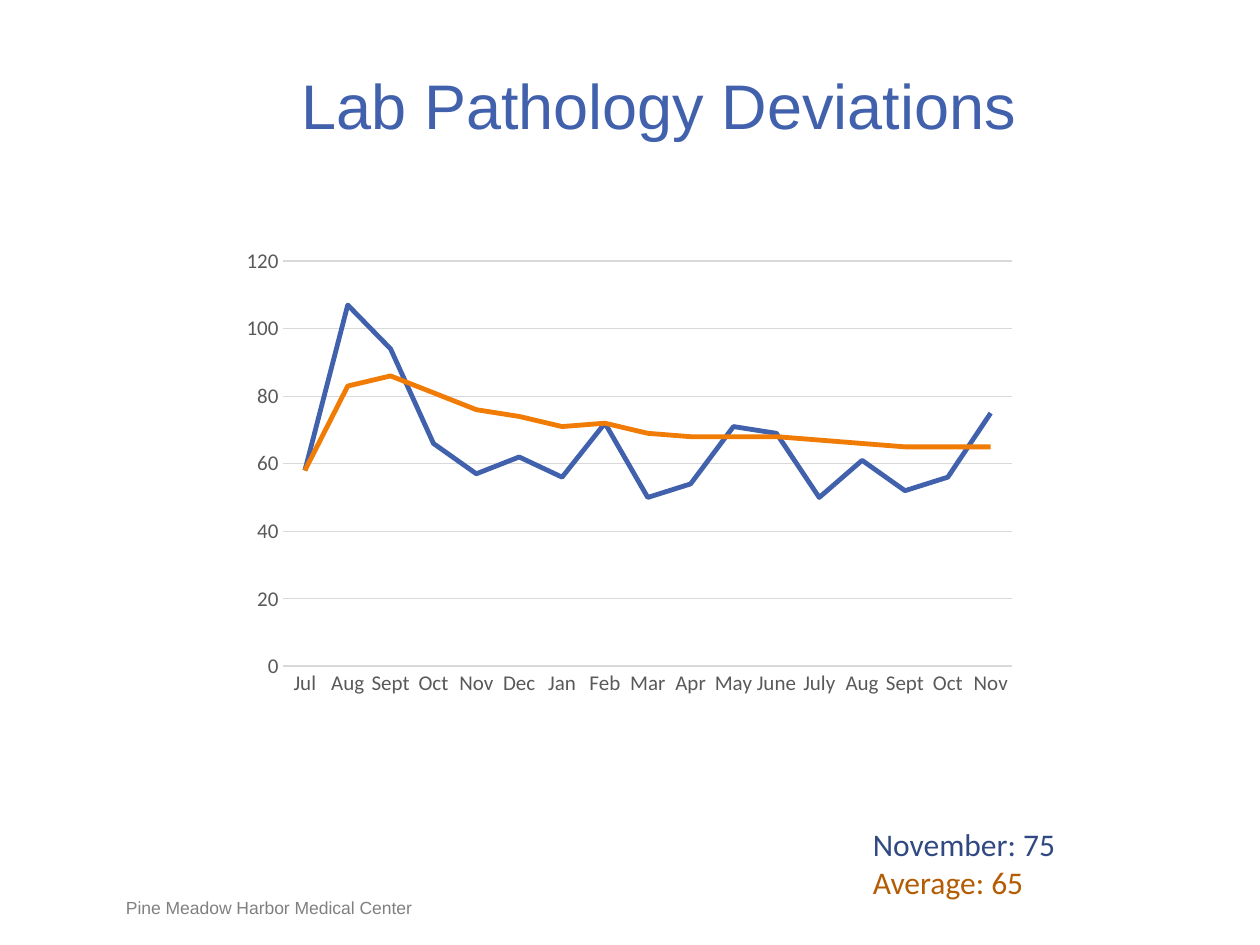
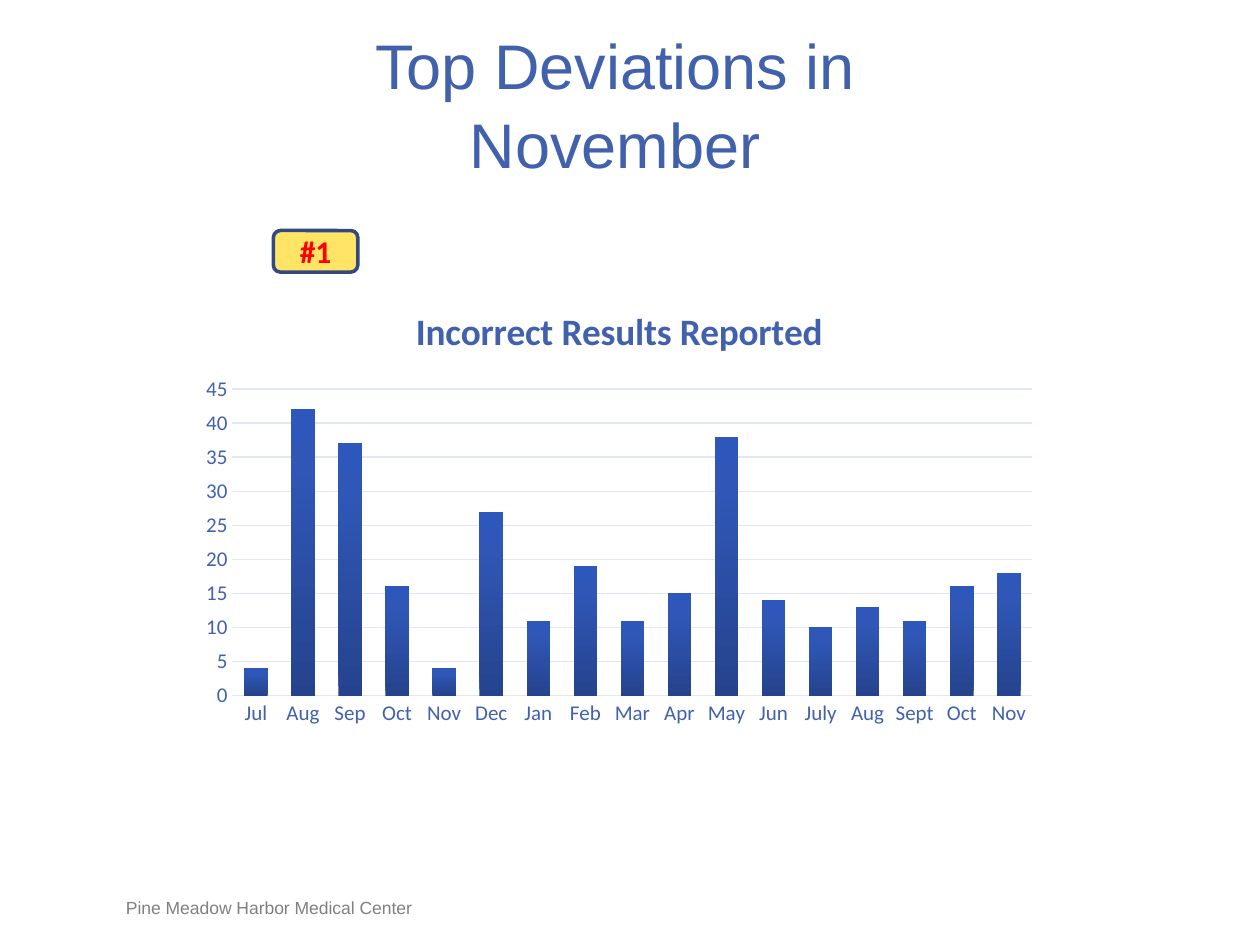
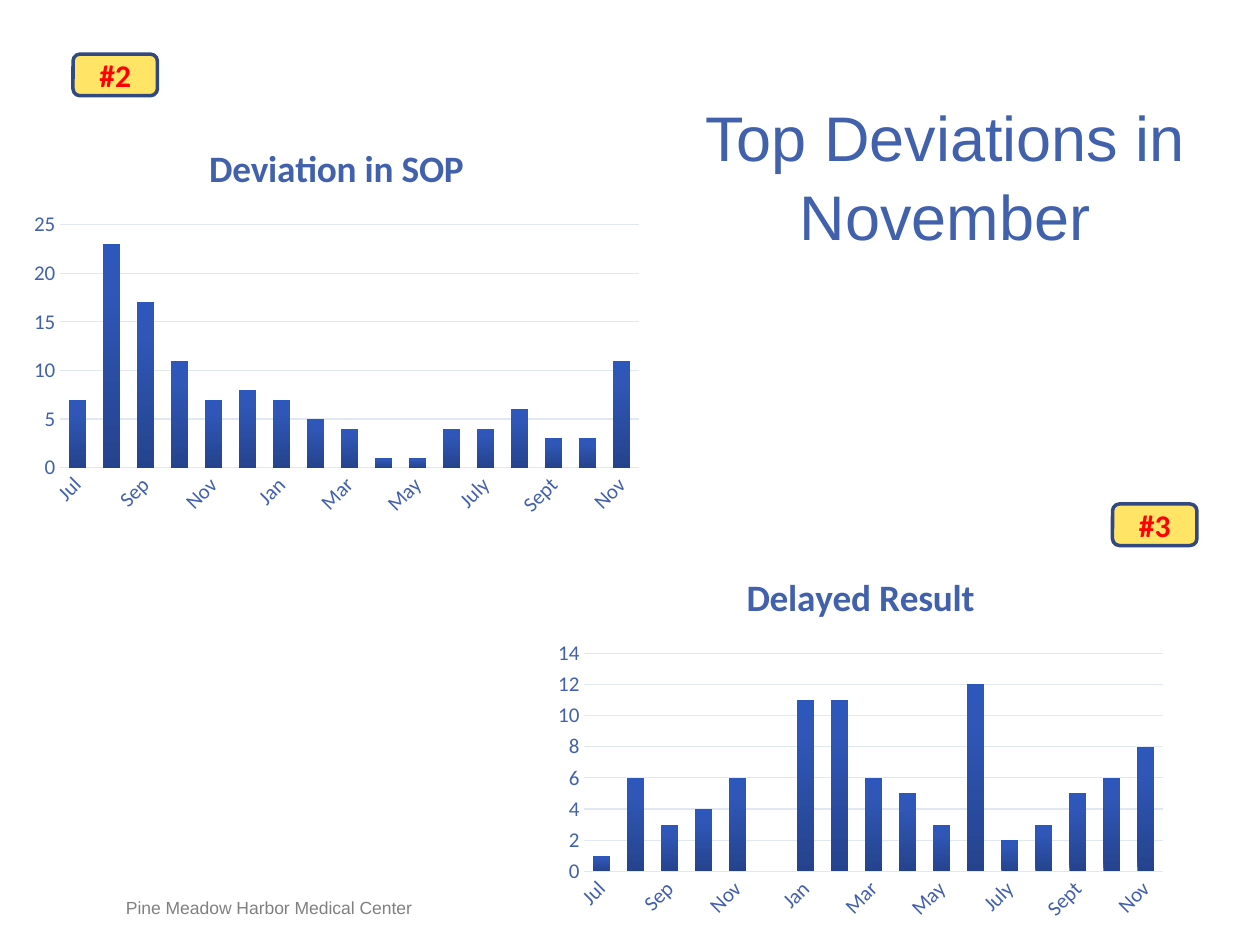
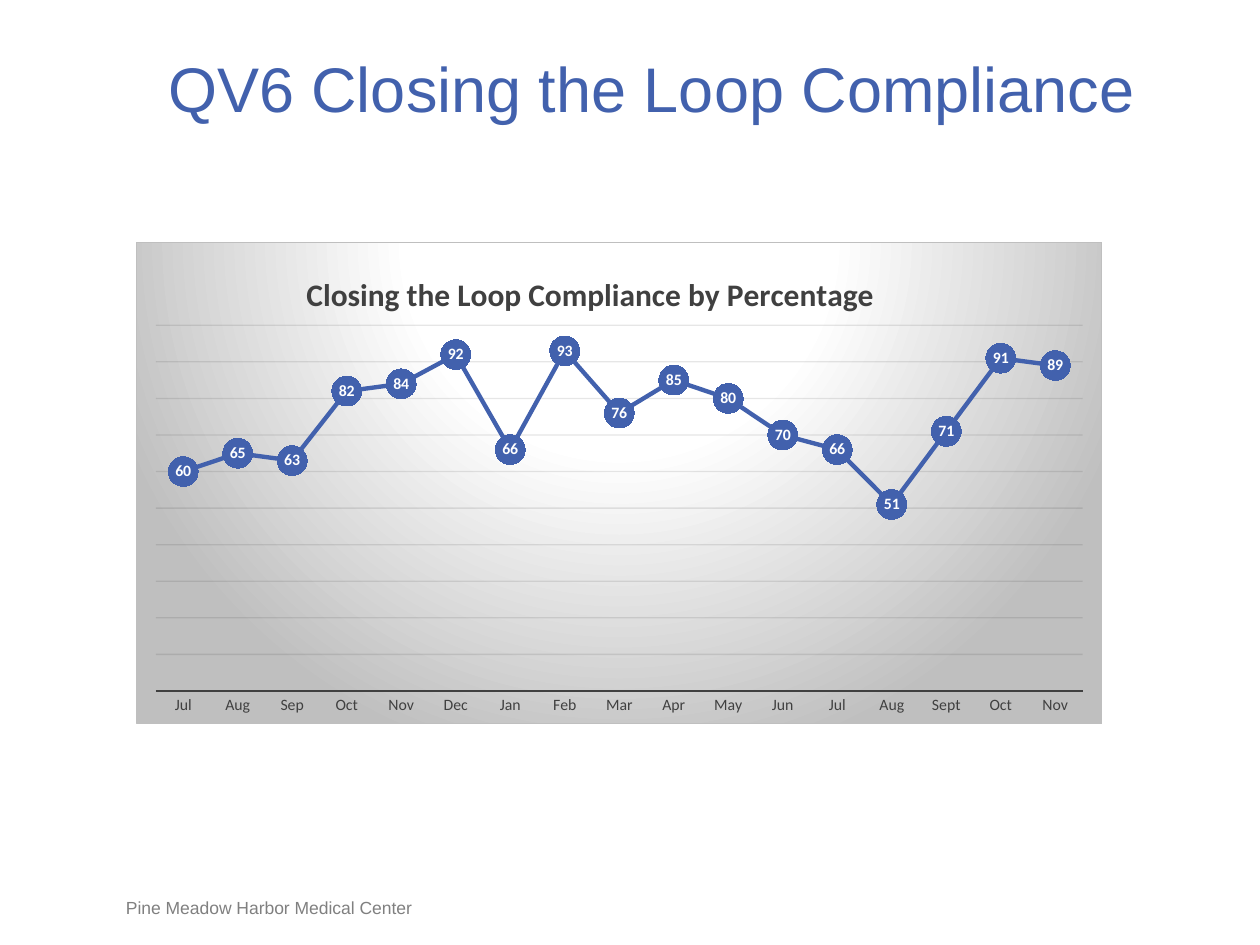
import pptx
import pptx.chart.data
import pptx.dml.color
import pptx.enum.chart
import pptx.enum.shapes
import pptx.enum.text
import pptx.oxml
import pptx.oxml.ns
import pptx.util

Inches = pptx.util.Inches
Pt = pptx.util.Pt
qn = pptx.oxml.ns.qn
ChartType = pptx.enum.chart.XL_CHART_TYPE
Anchor = pptx.enum.text.MSO_ANCHOR
Align = pptx.enum.text.PP_ALIGN

BLUE = "4261AD"
PALE_BLUE = "E2E7F4"
ORANGE = "F07B05"
DARK = "404040"
LIGHT_GRAY = "D9D9D9"
SILVER = "BFBFBF"
FOOTER = "Pine Meadow Harbor Medical Center"
YEAR = ["Jul", "Aug", "Sep", "Oct", "Nov", "Dec", "Jan", "Feb", "Mar", "Apr", "May", "Jun"]
MONTHS = YEAR + ["July", "Aug", "Sept", "Oct", "Nov"]
DEVIATION_MONTHS = ["Sept" if month == "Sep" else "June" if month == "Jun" else month for month in MONTHS]
COMPLIANCE_MONTHS = ["Jul" if month == "July" else month for month in MONTHS]
NAMESPACES = pptx.oxml.ns.nsdecls("a", "c")
BAR_STOPS = [(0, "25438D"), (80, "3057B7"), (100, "2E57BB")]
BACKDROP_STOPS = [(0, "FFFFFF"), (39, "FFFFFF"), (100, SILVER)]
UPWARD = '<a:lin ang="16200000" scaled="0"/>'
RADIAL = '<a:path path="circle"><a:fillToRect l="50000" t="-80000" r="50000" b="180000"/></a:path>'


def color(value):
    return pptx.dml.color.RGBColor.from_string(value)


def box(left, top, width, height):
    return [Inches(length) for length in (left, top, width, height)]


def style_font(font, size, value, name="Calibri", bold=False):
    font.size = Pt(size)
    font.name = name
    font.bold = bold
    font.color.rgb = color(value)


def style_line(line, value, width):
    line.color.rgb = color(value)
    line.width = Pt(width)


def add_run(paragraph, text, size, value, name="Calibri", bold=False):
    run = paragraph.add_run()
    run.text = text
    style_font(run.font, size, value, name, bold)


def clear_margins(frame):
    frame.margin_left = frame.margin_right = frame.margin_top = frame.margin_bottom = 0
    frame.word_wrap = True


def gradient(stops, direction):
    stop_xml = "".join(
        f'<a:gs pos="{position * 1000}"><a:srgbClr val="{value}"/></a:gs>' for position, value in stops
    )
    return f'<a:gradFill {NAMESPACES} rotWithShape="1"><a:gsLst>{stop_xml}</a:gsLst>{direction}</a:gradFill>'


def add_slide(presentation, layout, title, place):
    slide = presentation.slides.add_slide(layout)
    shape = slide.shapes.title
    shape.left, shape.top, shape.width, shape.height = box(*place)
    frame = shape.text_frame
    clear_margins(frame)
    frame.auto_size = pptx.enum.text.MSO_AUTO_SIZE.NONE
    frame.vertical_anchor = Anchor.TOP
    paragraph = frame.paragraphs[0]
    paragraph.alignment = Align.CENTER
    paragraph.line_spacing = 1.05
    add_run(paragraph, title, 36, BLUE, "Arial")
    return slide


def add_shared_footer(layout, slide):
    footer = slide.shapes.add_textbox(*box(1, 7.12, 3.17, 0.17))
    clear_margins(footer.text_frame)
    footer.text_frame.vertical_anchor = Anchor.BOTTOM
    add_run(footer.text_frame.paragraphs[0], FOOTER, 10, "808080", "Arial")
    layout.shapes.element.append(footer.element)


def add_summary(slide, place, lines):
    frame = slide.shapes.add_textbox(*box(*place)).text_frame
    frame.word_wrap = True
    for index, (text, value) in enumerate(lines):
        paragraph = frame.add_paragraph() if index else frame.paragraphs[0]
        add_run(paragraph, text, 18, value)


def add_badge(slide, text, left, top):
    rounded = pptx.enum.shapes.MSO_SHAPE.ROUNDED_RECTANGLE
    shape = slide.shapes.add_shape(rounded, *box(left, top, 0.67, 0.33))
    shape.shadow.inherit = False
    shape.fill.solid()
    shape.fill.fore_color.rgb = color("FFE466")
    style_line(shape.line, "314880", 2)
    shape.text_frame.vertical_anchor = Anchor.MIDDLE
    paragraph = shape.text_frame.paragraphs[0]
    paragraph.alignment = Align.CENTER
    add_run(paragraph, text, 18, "FF0000", bold=True)


def add_chart(slide, kind, place, months, series, maximum, step):
    data = pptx.chart.data.CategoryChartData()
    data.categories = months
    for name, values in series:
        data.add_series(name, values)
    chart = slide.shapes.add_chart(kind, *box(*place), data).chart
    style_font(chart.font, 10, "000000")
    chart.has_legend = False
    chart.has_title = False
    chart.plots[0].vary_by_categories = False
    chart.value_axis.minimum_scale = 0
    chart.value_axis.maximum_scale = maximum
    chart.value_axis.major_unit = step
    return chart


def style_axes(chart, size, text_color, axis_line, grid_line):
    for axis in (chart.category_axis, chart.value_axis):
        axis.major_tick_mark = axis.minor_tick_mark = pptx.enum.chart.XL_TICK_MARK.NONE
        style_font(axis.tick_labels.font, size, text_color)
    style_line(chart.category_axis.format.line, *axis_line)
    chart.value_axis.format.line.fill.background()
    style_line(chart.value_axis.major_gridlines.format.line, *grid_line)
    for axis in chart.element.iter(qn("c:catAx")):
        axis.find(qn("c:txPr")).find(qn("a:bodyPr")).set("rot", "-60000000")


def set_chart_title(chart, text, size, value):
    chart.has_title = True
    chart.chart_title.include_in_layout = False
    add_run(chart.chart_title.text_frame.paragraphs[0], text, size, value, bold=True)


def style_series_line(series, value, width):
    style_line(series.format.line, value, width)
    series.smooth = False


def add_deviation_chart(slide, place, title, values, maximum, step):
    chart = add_chart(slide, ChartType.COLUMN_CLUSTERED, place, MONTHS, [(title, values)], maximum, step)
    style_axes(chart, 12, BLUE, (PALE_BLUE, 0.75), (PALE_BLUE, 0.75))
    set_chart_title(chart, title, 21.3, BLUE)
    chart.plots[0].gap_width = 100
    chart.plots[0].overlap = -24
    for series in chart.element.iter(qn("c:ser")):
        series.get_or_add_spPr().insert(0, pptx.oxml.parse_xml(gradient(BAR_STOPS, UPWARD)))


def add_trend_chart(slide, monthly, average):
    series = [("Series 1", monthly), ("Series 2", average)]
    chart = add_chart(slide, ChartType.LINE, (1.83, 1.9, 6.33, 3.7), DEVIATION_MONTHS, series, 120, 20)
    style_axes(chart, 12, "595959", (LIGHT_GRAY, 1), (LIGHT_GRAY, 0.75))
    for line, value in zip(chart.plots[0].series, (BLUE, ORANGE)):
        style_series_line(line, value, 2.75)
        line.marker.style = pptx.enum.chart.XL_MARKER_STYLE.NONE


def fill_backdrop(chart):
    backdrop = pptx.oxml.parse_xml(
        f'<c:spPr {NAMESPACES}>{gradient(BACKDROP_STOPS, RADIAL)}'
        f'<a:ln w="9525"><a:solidFill><a:srgbClr val="{SILVER}"/></a:solidFill></a:ln></c:spPr>'
    )
    chart.element.find(qn("c:chart")).addnext(backdrop)


def place_chart_title(chart, left, top):
    title = chart.element.find(qn("c:chart")).find(qn("c:title"))
    for layout in title.findall(qn("c:layout")):
        title.remove(layout)
    title.find(qn("c:tx")).addnext(pptx.oxml.parse_xml(
        f'<c:layout {NAMESPACES}><c:manualLayout><c:xMode val="edge"/><c:yMode val="edge"/>'
        f'<c:x val="{left}"/><c:y val="{top}"/></c:manualLayout></c:layout>'
    ))


def fade_gridlines(chart, percent):
    for gridlines in chart.element.iter(qn("c:majorGridlines")):
        for value in gridlines.iter(qn("a:srgbClr")):
            value.append(pptx.oxml.parse_xml(f'<a:alpha {NAMESPACES} val="{percent * 1000}"/>'))


def add_compliance_chart(slide, values):
    place = (1.08, 1.92, 7.67, 3.83)
    chart = add_chart(slide, ChartType.LINE_MARKERS, place, COMPLIANCE_MONTHS, [("Series 1", values)], 100, 10)
    style_axes(chart, 9, DARK, (DARK, 1.5), ("0D0D0D", 0.75))
    fade_gridlines(chart, 10)
    chart.value_axis.visible = False
    set_chart_title(chart, "Closing the Loop Compliance by Percentage", 18, DARK)
    place_chart_title(chart, 0.17, 0.05)
    fill_backdrop(chart)
    series = chart.plots[0].series[0]
    style_series_line(series, BLUE, 2.5)
    marker = series.marker
    marker.style = pptx.enum.chart.XL_MARKER_STYLE.CIRCLE
    marker.size = 17
    marker.format.fill.solid()
    marker.format.fill.fore_color.rgb = color(BLUE)
    marker.format.line.fill.background()
    labels = series.data_labels
    labels.show_value = True
    labels.position = pptx.enum.chart.XL_LABEL_POSITION.CENTER
    labels.number_format = "0"
    labels.number_format_is_linked = False
    style_font(labels.font, 9, "FFFFFF", bold=True)


def main():
    presentation = pptx.Presentation()
    presentation.slide_width = Inches(10)
    presentation.slide_height = Inches(7.5)
    layout = presentation.slide_layouts[5]

    slide = add_slide(presentation, layout, "Lab Pathology Deviations", (0.98, 0.5, 8.5, 0.61))
    add_shared_footer(layout, slide)
    add_summary(slide, (6.83, 6.5, 2, 0.71), [("November: 75", "314982"), ("Average: 65", "B45C04")])
    add_trend_chart(
        slide,
        [58, 107, 94, 66, 57, 62, 56, 72, 50, 54, 71, 69, 50, 61, 52, 56, 75],
        [58, 83, 86, 81, 76, 74, 71, 72, 69, 68, 68, 68, 67, 66, 65, 65, 65],
    )

    slide = add_slide(presentation, layout, "Top Deviations in November", (2.17, 0.18, 5.42, 1.21))
    add_badge(slide, "#1", 2.17, 1.83)
    incorrect = [4, 42, 37, 16, 4, 27, 11, 19, 11, 15, 38, 14, 10, 13, 11, 16, 18]
    add_deviation_chart(slide, (1.5, 2.25, 6.83, 3.58), "Incorrect Results Reported", incorrect, 45, 5)

    slide = add_slide(presentation, layout, "Top Deviations in November", (5.5, 0.75, 4, 1.21))
    add_badge(slide, "#3", 8.83, 4)
    procedure = [7, 23, 17, 11, 7, 8, 7, 5, 4, 1, 1, 4, 4, 6, 3, 3, 11]
    add_deviation_chart(slide, (0.17, 0.96, 5, 3.21), "Deviation in SOP", procedure, 25, 5)
    delayed = [1, 6, 3, 4, 6, None, 11, 11, 6, 5, 3, 12, 2, 3, 5, 6, 8]
    add_deviation_chart(slide, (4.33, 4.37, 5, 3), "Delayed Result", delayed, 14, 2)
    add_badge(slide, "#2", 0.58, 0.43)

    slide = add_slide(presentation, layout, "QV6 Closing the Loop Compliance", (0.92, 0.36, 8.5, 0.61))
    add_compliance_chart(slide, [60, 65, 63, 82, 84, 92, 66, 93, 76, 85, 80, 70, 66, 51, 71, 91, 89])

    presentation.save("out.pptx")


if __name__ == "__main__":
    main()
